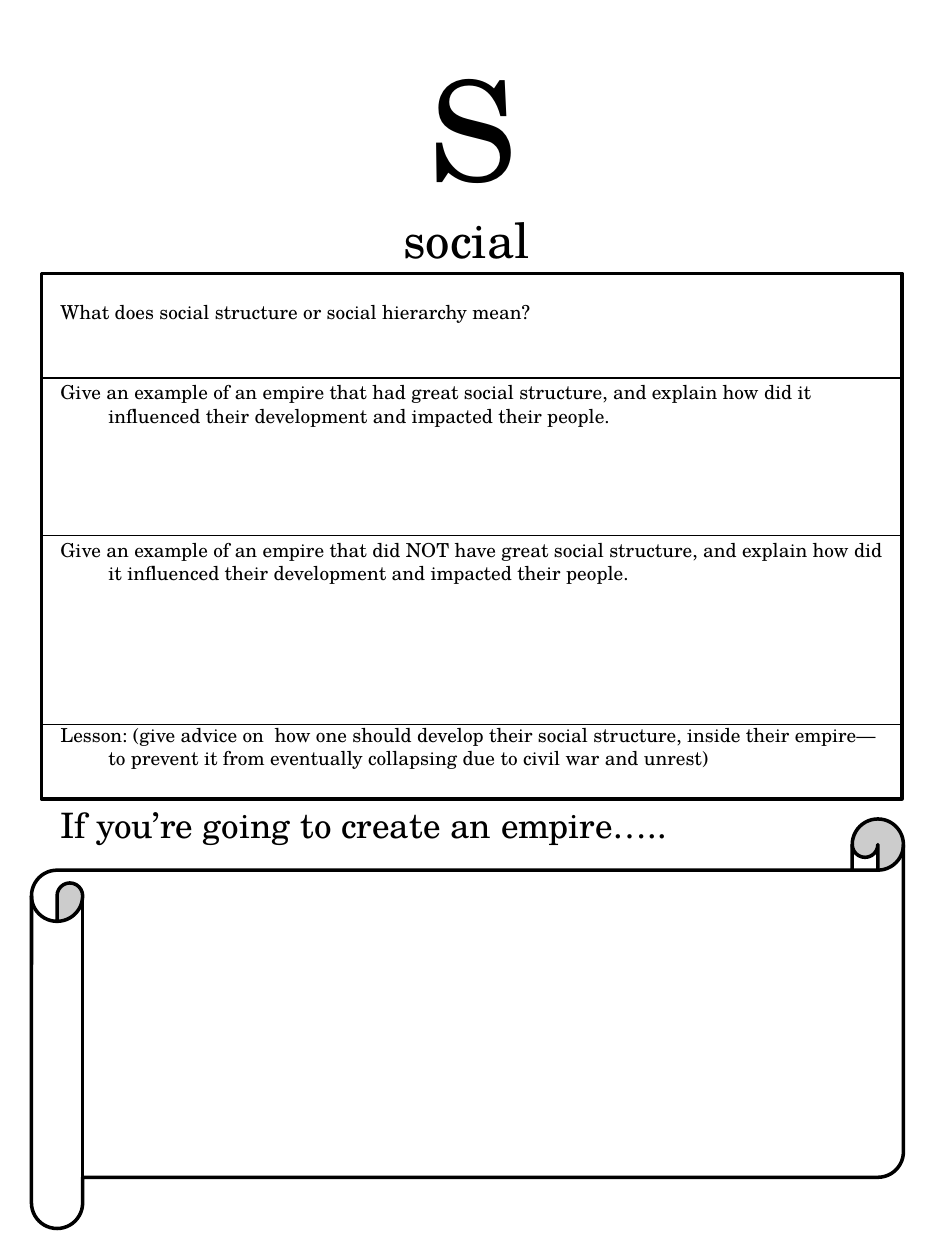
from lxml.etree import SubElement as Sub
from pptx import Presentation
from pptx.dml.color import RGBColor
from pptx.enum.shapes import MSO_CONNECTOR as Conn, MSO_SHAPE as Kind
from pptx.enum.text import MSO_ANCHOR as Anchor, MSO_AUTO_SIZE as Fit, PP_ALIGN as Align
from pptx.oxml.ns import qn
from pptx.util import Inches, Pt

BLACK = RGBColor(0, 0, 0)
WHITE = RGBColor(255, 255, 255)
FONT = "TeX Gyre Schola"
SMALL = 11
ROW = SMALL * 1.4

HEAD = [("S", 79.2), ("social ", 27.9)]
ITEMS = [
    ("What does social structure or social hierarchy mean?", SMALL, 0),
    ("Give an example of an empire that had great social structure, and explain "
     "how did it influenced their development and impacted their people.", SMALL, 2),
    ("Give an example of an empire that did NOT have great social structure, and explain "
     "how did it influenced their development and impacted their people.", SMALL, 4),
    ("Lesson: (give advice on  how one should develop their social structure, inside their "
     "empire—to prevent it from eventually collapsing due to civil war and unrest)", SMALL, 5),
    ("If you’re going to create an empire…..", 20, 1),
]


class Sheet:
    def __init__(self, slide):
        self.slide = slide
        self.shapes = slide.shapes

    def place(self, item, left, top, width, height):
        item.left, item.top = Inches(left), Inches(top)
        item.width, item.height = Inches(width), Inches(height)
        frame = item.text_frame
        frame.word_wrap = True
        frame.auto_size = Fit.NONE
        return frame

    def run(self, para, text, size):
        run = para.add_run()
        run.text = text
        run.font.name = FONT
        run.font.size = Pt(size)
        run.font.color.rgb = BLACK

    def title(self, parts, *area):
        frame = self.place(self.shapes.title, *area)
        frame.vertical_anchor = Anchor.MIDDLE
        para = frame.paragraphs[0]
        para.alignment = Align.CENTER
        for num, (text, size) in enumerate(parts):
            if num:
                para.add_line_break()
            self.run(para, text, size)

    def body(self, items, *area):
        frame = self.place(self.slide.placeholders[1], *area)
        frame.vertical_anchor = Anchor.TOP
        for num, (text, size, rows) in enumerate(items):
            para = frame.add_paragraph() if num else frame.paragraphs[0]
            para.alignment = Align.LEFT
            para.space_before = Pt(rows * ROW + size * 0.2)
            props = para._p.get_or_add_pPr()
            props.set("marL", str(Inches(0.38)))
            props.set("indent", str(-Inches(0.38)))
            Sub(props, qn("a:buNone"))
            self.run(para, text, size)

    def box(self, kind, left, top, width, height):
        box = self.shapes.add_shape(
            kind, Inches(left), Inches(top), Inches(width), Inches(height))
        box.shadow.inherit = False
        box.fill.solid()
        box.fill.fore_color.rgb = WHITE
        box.line.color.rgb = BLACK
        box.line.width = Pt(2)
        return box

    def back(self, item):
        self.shapes.element.insert(2, item.element)

    def rule(self, left, right, top):
        rule = self.shapes.add_connector(
            Conn.STRAIGHT, Inches(left), Inches(top), Inches(right), Inches(top))
        rule.line.color.rgb = BLACK
        rule.line.width = Pt(1)
        Sub(rule.element.spPr, qn("a:effectLst"))


def main():
    deck = Presentation()
    deck.slide_width, deck.slide_height = Inches(7.5), Inches(10)
    sheet = Sheet(deck.slides.add_slide(deck.slide_layouts[1]))
    sheet.title(HEAD, 0.38, 0.4, 6.75, 1.67)
    sheet.body(ITEMS, 0.38, 2.33, 6.75, 6.6)
    sheet.back(sheet.box(Kind.RECTANGLE, 0.33, 2.17, 6.83, 4.17))
    sheet.box(Kind.HORIZONTAL_SCROLL, 0.25, 6.5, 6.92, 3.25)
    for top in (3, 4.25, 5.75):
        sheet.rule(0.33, 7.17, top)
    deck.save("out.pptx")


if __name__ == "__main__":
    main()
